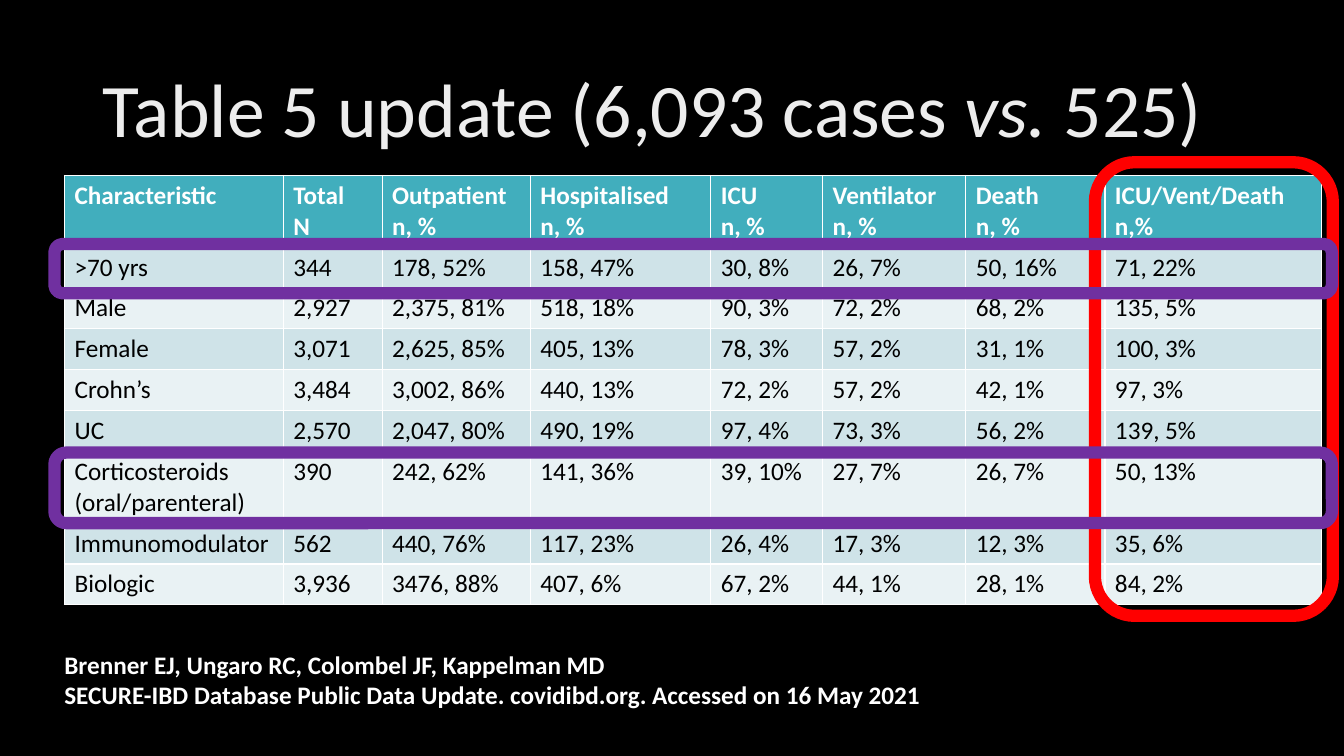
from dataclasses import dataclass

from lxml.etree import SubElement
from pptx import Presentation
from pptx.dml.color import RGBColor as RGB
from pptx.enum.shapes import MSO_SHAPE as SHAPE
from pptx.enum.text import MSO_ANCHOR as ANCHOR, MSO_AUTO_SIZE as FIT, PP_ALIGN as ALIGN
from pptx.oxml.ns import qn
from pptx.util import Inches, Pt


@dataclass(frozen=True)
class Theme:
    font: str = "Calibri"
    title: int = 54
    body: int = 18
    frame: float = 8.75
    rule: int = 1
    thick: int = 3
    back: str = "000000"
    dark: str = "000000"
    light: str = "FFFFFF"
    head: str = "41AEBD"
    bands: tuple = ("CFE3E8", "E9F2F4")
    red: str = "FF0000"
    purple: str = "7030A0"
    fade: tuple = ((0, "BFBFBF"), (28, "EDEDED"), (100, "FFFFFF"))
    angle: int = 80


THEME = Theme()

TITLE = [("Table 5 update (6,093 cases ", False), ("vs.", True), (" 525)", False)]
WIDTHS = [2.17, 0.98, 1.47, 1.79, 1.11, 1.42, 1.38, 2.15]
HEADS = ["Characteristic", "Total\nN", "Outpatient\nn, %", "Hospitalised\nn, %",
         "ICU\nn, %", "Ventilator\nn, %", "Death\nn, %", "ICU/Vent/Death\nn,%"]
CASES = [
    [">70 yrs", "344", "178, 52%", "158, 47%", "30, 8%", "26, 7%", "50, 16%", "71, 22%"],
    ["Male", "2,927", "2,375, 81%", "518, 18%", "90, 3%", "72, 2%", "68, 2%", "135, 5%"],
    ["Female", "3,071", "2,625, 85%", "405, 13%", "78, 3%", "57, 2%", "31, 1%", "100, 3%"],
    ["Crohn’s", "3,484", "3,002, 86%", "440, 13%", "72, 2%", "57, 2%", "42, 1%", "97, 3%"],
    ["UC", "2,570", "2,047, 80%", "490, 19%", "97, 4%", "73, 3%", "56, 2%", "139, 5%"],
    ["Corticosteroids\n(oral/parenteral)", "390", "242, 62%", "141, 36%", "39, 10%",
     "27, 7%", "26, 7%", "50, 13%"],
    ["Immunomodulator", "562", "440, 76%", "117, 23%", "26, 4%", "17, 3%", "12, 3%", "35, 6%"],
    ["Biologic", "3,936", "3476, 88%", "407, 6%", "67, 2%", "44, 1%", "28, 1%", "84, 2%"],
]
SOURCE = ("Brenner EJ, Ungaro RC, Colombel JF, Kappelman MD\n"
          "SECURE-IBD Database Public Data Update. covidibd.org. Accessed on 16 May 2021")


def fade(run):
    """Fill a run with the title's colour gradient."""
    fill = run.font.fill
    fill.gradient()
    fill.gradient_angle = 360 - THEME.angle
    stops = run.font._element.find(".//" + qn("a:gsLst"))
    for old in list(stops):
        stops.remove(old)
    for place, color in THEME.fade:
        stop = SubElement(stops, qn("a:gs"), pos=str(place * 1000))
        SubElement(stop, qn("a:srgbClr"), val=color)


def put(frame, text, size=THEME.body, color=None, bold=False, space=None):
    """Write a string, one paragraph a line, or one list of (text, italic) runs.

    Without a colour the runs get the title's gradient.
    """
    lines = [[(line, False)] for line in text.split("\n")] if isinstance(text, str) else [text]
    for i, line in enumerate(lines):
        para = frame.paragraphs[0] if i == 0 else frame.add_paragraph()
        para.alignment = ALIGN.LEFT
        para.line_spacing = space
        for words, italic in line:
            run = para.add_run()
            run.text = words
            font = run.font
            font.name, font.size = THEME.font, Pt(size)
            font.bold, font.italic = bold, italic
            if color:
                font.color.rgb = RGB.from_string(color)
            else:
                fade(run)


def place(shape, left, top, width, height):
    shape.left, shape.top = Inches(left), Inches(top)
    shape.width, shape.height = Inches(width), Inches(height)


def add_title(slide):
    title = slide.shapes.title
    place(title, 0.92, 0.4, 11.5, 1.45)
    frame = title.text_frame
    frame.auto_size = FIT.NONE
    frame.vertical_anchor = ANCHOR.MIDDLE
    put(frame, TITLE, size=THEME.title, space=0.9)


def edge(cell, base):
    """Draw the cell's four borders, the lower one with its own width."""
    props = cell._tc.get_or_add_tcPr()
    for side in "LRTB":
        width = base if side == "B" else THEME.rule
        line = SubElement(props, qn("a:ln" + side), w=str(Pt(width)))
        fill = SubElement(line, qn("a:solidFill"))
        SubElement(fill, qn("a:srgbClr"), val=THEME.light)


def add_cases(slide):
    rows = [HEADS] + CASES
    table = slide.shapes.add_table(len(rows), len(WIDTHS), Inches(0.64), Inches(1.74),
                                   Inches(sum(WIDTHS)), Inches(4.24)).table
    for column, width in zip(table.columns, WIDTHS):
        column.width = Inches(width)
    for r, row in enumerate(rows):
        table.rows[r].height = Inches(0.4)
        head = r == 0
        back = THEME.head if head else THEME.bands[(r - 1) % 2]
        for c, text in enumerate(row):
            cell = table.cell(r, c)
            edge(cell, THEME.thick if head else THEME.rule)
            cell.fill.solid()
            cell.fill.fore_color.rgb = RGB.from_string(back)
            put(cell.text_frame, text, color=THEME.light if head else THEME.dark, bold=head)


def add_source(slide):
    box = slide.shapes.add_textbox(Inches(0.54), Inches(6.39), Inches(12.14), Inches(0.71))
    frame = box.text_frame
    frame.word_wrap = True
    frame.auto_size = FIT.SHAPE_TO_FIT_TEXT
    put(frame, SOURCE, color=THEME.light, bold=True)


def add_ring(slide, left, top, width, height, color):
    ring = slide.shapes.add_shape(SHAPE.ROUNDED_RECTANGLE, Inches(left), Inches(top),
                                  Inches(width), Inches(height))
    ring.shadow.inherit = False
    ring.fill.background()
    ring.line.color.rgb = RGB.from_string(color)
    ring.line.width = Pt(THEME.frame)


def main():
    deck = Presentation()
    deck.slide_width, deck.slide_height = Inches(13.33), Inches(7.5)
    slide = deck.slides.add_slide(deck.slide_layouts.get_by_name("Title Only"))
    slide.background.fill.solid()
    slide.background.fill.fore_color.rgb = RGB.from_string(THEME.back)
    add_title(slide)
    add_cases(slide)
    add_source(slide)
    add_ring(slide, 10.86, 1.61, 2.36, 4.5, THEME.red)
    for top, height in ((2.42, 0.49), (4.49, 0.7)):
        add_ring(slide, 0.54, top, 12.67, height, THEME.purple)
    deck.save("out.pptx")


if __name__ == "__main__":
    main()
